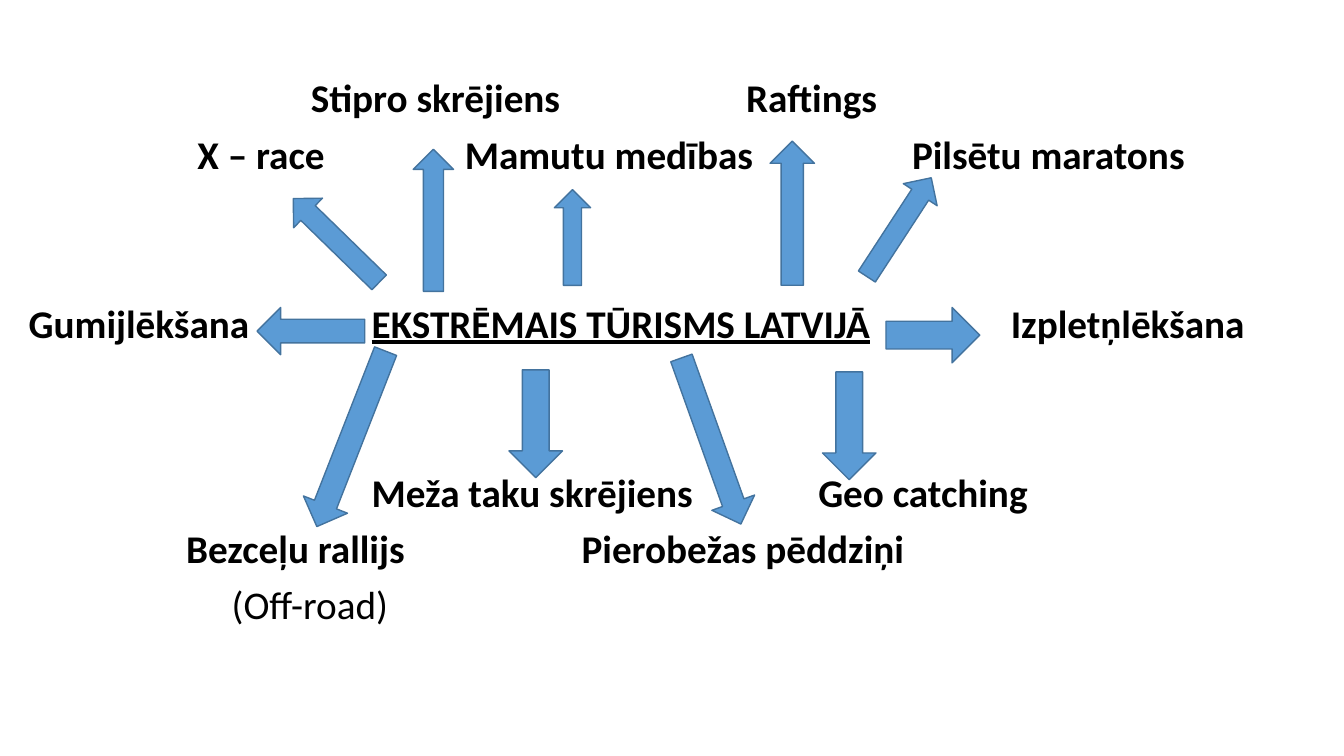
"""Build a slide mapping the kinds of extreme tourism in Latvia."""
from dataclasses import dataclass

from pptx import Presentation
from pptx.dml.color import RGBColor
from pptx.enum.shapes import MSO_SHAPE
from pptx.enum.text import MSO_ANCHOR, MSO_AUTO_SIZE, PP_ALIGN
from pptx.util import Pt


@dataclass(frozen=True)
class Theme:
    """Colours, font and type sizes of the slide."""
    ink: RGBColor = RGBColor(0, 0, 0)
    fill: RGBColor = RGBColor(0x5B, 0x9B, 0xD5)
    edge: RGBColor = RGBColor(0x43, 0x73, 0x9E)
    face: str = "Calibri"
    size: Pt = Pt(28)


theme = Theme()
HUB = "EKSTRĒMAIS TŪRISMS LATVIJĀ"
NOTE = "(Off-road)"
TOP, PITCH, HEIGHT = 52.5, 40.25, 36

LABELS = [
    (0, 222, 190, "Stipro skrējiens"),
    (0, 533, 104, "Raftings"),
    (1, 141, 102, "X – race"),
    (1, 332, 217, "Mamutu medības"),
    (1, 651.5, 206, "Pilsētu maratons"),
    (4, 20.5, 168, "Gumijlēkšana"),
    (4, 265.5, 367, HUB),
    (4, 722, 178, "Izpletņlēkšana"),
    (7, 265.5, 240, "Meža taku skrējiens"),
    (7, 584.5, 160, "Geo catching"),
    (8, 133, 167, "Bezceļu rallijs"),
    (8, 415.5, 241, "Pierobežas pēddziņi"),
    (9, 165.5, 122, NOTE),
]

UP, DOWN = MSO_SHAPE.UP_ARROW, MSO_SHAPE.DOWN_ARROW
LEFT, RIGHT = MSO_SHAPE.LEFT_ARROW, MSO_SHAPE.RIGHT_ARROW
ARROWS = [
    (UP, 225.4, 128.9, 29.5, 85.7, 314.3),
    (UP, 295.2, 106.6, 28.8, 101.5, 0),
    (UP, 396, 135.4, 25.9, 68.4, 0),
    (RIGHT, 632.9, 219.6, 67, 39.6, 0),
    (DOWN, 234, 246.2, 33.8, 134.6, 21.4),
    (DOWN, 363.6, 264.2, 38.2, 77, 0),
    (DOWN, 491.8, 252, 32.4, 126, 340.3),
    (LEFT, 183.6, 219.6, 77, 33.8, 0),
    (UP, 550.1, 100.8, 31.7, 103, 0),
    (DOWN, 587.5, 265.7, 38.2, 77, 0),
    (UP, 627.8, 120.2, 28.8, 84.2, 33.1),
]

deck = Presentation()
deck.slide_width, deck.slide_height = Pt(960), Pt(540)
slide = deck.slides.add_slide(deck.slide_layouts[5])

layout = {"word_wrap": True, "auto_size": MSO_AUTO_SIZE.NONE,
          "vertical_anchor": MSO_ANCHOR.TOP, "margin_left": 0,
          "margin_top": 0, "margin_right": 0, "margin_bottom": 0}

for row, left, width, label in LABELS:
    place = {"left": Pt(left), "top": Pt(TOP + row * PITCH),
             "width": Pt(width), "height": Pt(HEIGHT)}
    box = slide.shapes.title if label == HUB else slide.shapes.add_textbox(0, 0, 0, 0)
    for name, value in place.items():
        setattr(box, name, value)
    for name, value in layout.items():
        setattr(box.text_frame, name, value)
    para = box.text_frame.paragraphs[0]
    para.alignment = PP_ALIGN.LEFT
    run = para.add_run()
    run.text = label
    style = {"name": theme.face, "size": theme.size,
             "bold": label != NOTE, "underline": label == HUB}
    for name, value in style.items():
        setattr(run.font, name, value)
    run.font.color.rgb = theme.ink

for kind, left, top, width, height, turn in ARROWS:
    arrow = slide.shapes.add_shape(kind, Pt(left), Pt(top), Pt(width), Pt(height))
    arrow.rotation = turn
    arrow.shadow.inherit = False
    arrow.fill.solid()
    arrow.fill.fore_color.rgb = theme.fill
    arrow.line.color.rgb = theme.edge
    arrow.line.width = Pt(1)

deck.save("out.pptx")
